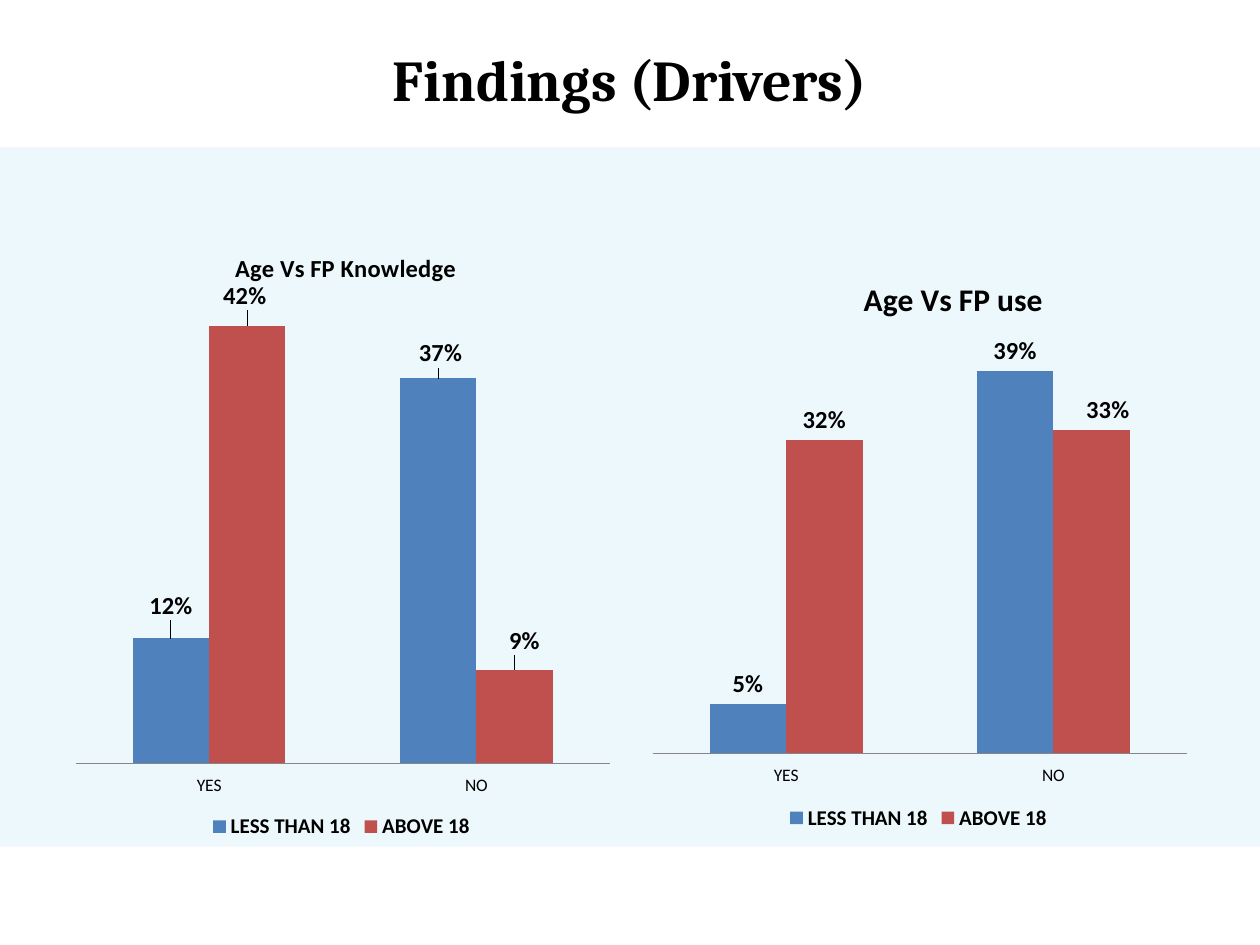
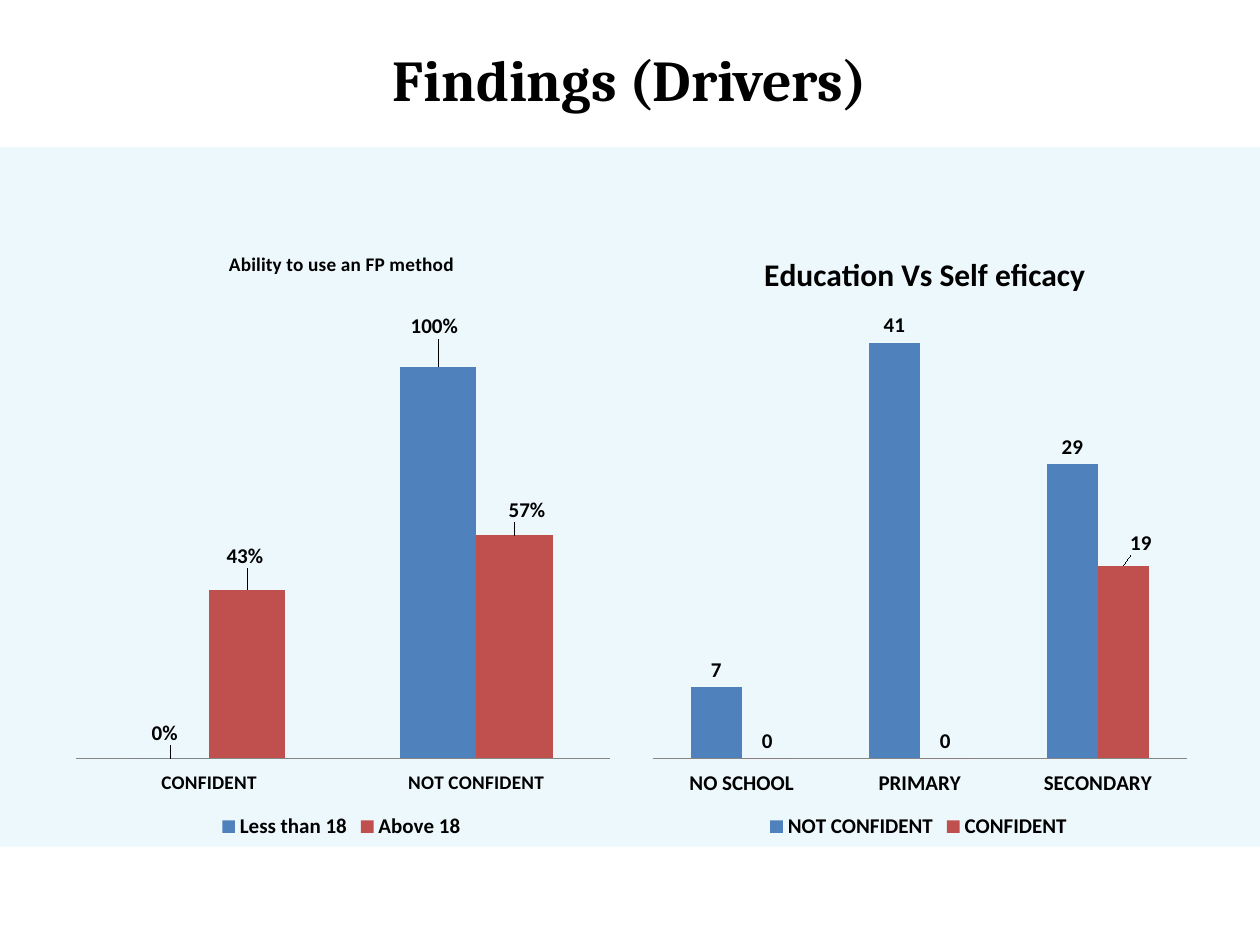
"""Build two slides of findings, each with a pair of clustered column charts."""
from lxml import etree
from pptx import Presentation
from pptx.chart.data import CategoryChartData
from pptx.dml.color import RGBColor
from pptx.enum.chart import XL_CHART_TYPE, XL_LABEL_POSITION, XL_LEGEND_POSITION, XL_TICK_LABEL_POSITION, XL_TICK_MARK
from pptx.enum.shapes import MSO_SHAPE
from pptx.enum.text import MSO_ANCHOR, PP_ALIGN
from pptx.oxml.ns import qn
from pptx.util import Inches, Pt

COLUMNS = XL_CHART_TYPE.COLUMN_CLUSTERED
ABOVE_BAR = XL_LABEL_POSITION.OUTSIDE_END
LEGEND_BOTTOM = XL_LEGEND_POSITION.BOTTOM
LABELS_LOW = XL_TICK_LABEL_POSITION.LOW
NO_TICK = XL_TICK_MARK.NONE
RECTANGLE = MSO_SHAPE.RECTANGLE
TOP = MSO_ANCHOR.TOP
CENTER = PP_ALIGN.CENTER

BLACK, AXIS_GRAY, BAND_BLUE = "000000", "868686", "57BFE3"
SERIES_COLORS = ["4F81BD", "C0504D"]
HEADING_FONT, BODY_FONT = "Cambria", "Calibri"
CHART_TOP, CHART_WIDTH = 1.75, 4.42
LEFT_COLUMN, RIGHT_COLUMN = 0.5, 5.08
PLOT_LEFT, PLOT_WIDTH = 0.1, 4.24

FINDINGS = [
    [
        {"title": "Age Vs FP Knowledge", "title_size": 14, "title_at": (1.33, 0.21),
         "left": LEFT_COLUMN, "height": 4.95, "plot_top": 0.59, "plot_height": 3.72,
         "answers": ["YES", "NO"], "answer_size": 10, "answer_bold": False,
         "groups": {"LESS THAN 18": [0.12, 0.37], "ABOVE 18": [0.42, 0.09]},
         "format": "0%", "maximum": 0.45, "label_size": 14,
         "label_shifts": {(0, 0): (0, -0.1), (0, 1): (0.02, -0.04),
                          (1, 0): (-0.02, -0.08), (1, 1): (0.08, -0.07)}},
        {"title": "Age Vs FP use", "title_size": 18, "title_at": (1.73, 0.41),
         "left": RIGHT_COLUMN, "height": 4.88, "plot_top": 0.73, "plot_height": 3.5,
         "answers": ["YES", "NO"], "answer_size": 10, "answer_bold": False,
         "groups": {"LESS THAN 18": [0.05, 0.39], "ABOVE 18": [0.32, 0.33]},
         "format": "0%", "maximum": 0.45, "label_size": 14,
         "label_shifts": {(1, 1): (0.13, 0)}},
    ],
    [
        {"title": "Ability to use an FP method", "title_size": 11, "title_at": (1.29, 0.21),
         "left": LEFT_COLUMN, "height": 4.95, "plot_top": 0.54, "plot_height": 3.73,
         "answers": ["CONFIDENT", "NOT CONFIDENT"], "answer_size": 11, "answer_bold": True,
         "groups": {"Less than 18": [0, 1], "Above 18": [0.43, 0.57]},
         "format": "0%", "maximum": 1.2, "label_size": 12,
         "label_shifts": {(0, 0): (-0.05, -0.06), (0, 1): (-0.03, -0.18),
                          (1, 0): (-0.02, -0.13), (1, 1): (0.1, -0.06)}},
        {"title": "Education Vs Self eficacy", "title_size": 18, "title_at": (0.94, 0.21),
         "left": RIGHT_COLUMN, "height": 4.95, "plot_top": 0.65, "plot_height": 3.62,
         "answers": ["NO SCHOOL", "PRIMARY", "SECONDARY"], "answer_size": 12, "answer_bold": True,
         "groups": {"NOT CONFIDENT": [7, 41, 29], "CONFIDENT": [0, 0, 19]},
         "format": "###0", "maximum": 45, "label_size": 12,
         "label_shifts": {(1, 2): (0.14, -0.04)}},
    ],
]


def style_font(font, size, bold, name=BODY_FONT):
    """Give a font its name, size and weight in black."""
    font.name, font.size, font.bold = name, Pt(size), bold
    font.color.rgb = RGBColor.from_string(BLACK)


def place(part, index, settings):
    """Give a chart part a manual layout at a child index."""
    for old_layout in part.findall(qn("c:layout")):
        part.remove(old_layout)
    layout = etree.Element(qn("c:layout"))
    manual = etree.SubElement(layout, qn("c:manualLayout"))
    for tag, value in settings.items():
        etree.SubElement(manual, qn(f"c:{tag}")).set("val", str(value))
    part.insert(index, layout)


prs = Presentation()
prs.slide_width, prs.slide_height = Inches(10), Inches(7.5)
title_only = prs.slide_layouts[5]

for findings in FINDINGS:
    slide = prs.slides.add_slide(title_only)

    band = slide.shapes.add_shape(RECTANGLE, 0, Inches(1.17), Inches(10), Inches(5.55))
    band.shadow.inherit = False
    band.line.fill.background()
    band.fill.solid()
    band.fill.fore_color.rgb = RGBColor.from_string(BAND_BLUE)
    band_color = band.fill._xPr.find(f".//{qn('a:srgbClr')}")
    etree.SubElement(band_color, qn("a:alpha")).set("val", "10000")

    heading = slide.shapes.title
    heading.left, heading.top = Inches(0.5), Inches(0.3)
    heading.width, heading.height = Inches(9), Inches(0.86)
    heading.text_frame.vertical_anchor = TOP
    heading_line = heading.text_frame.paragraphs[0]
    heading_line.alignment = CENTER
    heading_run = heading_line.add_run()
    heading_run.text = "Findings (Drivers)"
    style_font(heading_run.font, 33, True, HEADING_FONT)

    for finding in findings:
        height = finding["height"]
        data = CategoryChartData(number_format=finding["format"])
        data.categories = finding["answers"]
        for group, values in finding["groups"].items():
            data.add_series(group, values)
        chart = slide.shapes.add_chart(
            COLUMNS, Inches(finding["left"]), Inches(CHART_TOP),
            Inches(CHART_WIDTH), Inches(height), data).chart
        style_font(chart.font, 10, False)

        chart.has_title = True
        caption = chart.chart_title.text_frame.paragraphs[0].add_run()
        caption.text = finding["title"]
        style_font(caption.font, finding["title_size"], True)
        title_x, title_y = finding["title_at"]
        place(chart.chart_title._element, 1, {
            "xMode": "edge", "yMode": "edge",
            "x": title_x / CHART_WIDTH, "y": title_y / height})

        chart.has_legend = True
        chart.legend.position = LEGEND_BOTTOM
        chart.legend.include_in_layout = False
        style_font(chart.legend.font, 12, True)

        answer_axis = chart.category_axis
        answer_axis.major_tick_mark = answer_axis.minor_tick_mark = NO_TICK
        answer_axis.tick_label_position = LABELS_LOW
        answer_axis.has_major_gridlines = False
        answer_axis.format.line.color.rgb = RGBColor.from_string(AXIS_GRAY)
        answer_axis.format.line.width = Pt(0.75)
        style_font(answer_axis.tick_labels.font, finding["answer_size"], finding["answer_bold"])

        share_axis = chart.value_axis
        share_axis.visible = False
        share_axis.has_major_gridlines = False
        share_axis.minimum_scale, share_axis.maximum_scale = 0, finding["maximum"]
        share_axis.tick_labels.number_format = finding["format"]
        share_axis.tick_labels.number_format_is_linked = False

        plot = chart.plots[0]
        plot.gap_width, plot.overlap = 150, 0
        plot.vary_by_categories = False
        place(chart._chartSpace.find(f".//{qn('c:plotArea')}"), 0, {
            "layoutTarget": "inner", "xMode": "edge", "yMode": "edge",
            "x": PLOT_LEFT / CHART_WIDTH, "y": finding["plot_top"] / height,
            "w": PLOT_WIDTH / CHART_WIDTH, "h": finding["plot_height"] / height})

        for series, color in zip(plot.series, SERIES_COLORS):
            series.format.fill.solid()
            series.format.fill.fore_color.rgb = RGBColor.from_string(color)
            labels = series.data_labels
            labels.show_value = True
            labels.position = ABOVE_BAR
            labels.number_format = finding["format"]
            labels.number_format_is_linked = False
            style_font(labels.font, finding["label_size"], True)

        for (group_index, answer_index), (dx, dy) in finding["label_shifts"].items():
            series = plot.series[group_index]
            label = series.points[answer_index].data_label
            label.position = ABOVE_BAR
            style_font(label.font, finding["label_size"], True)
            label_part = series._element.xpath(f".//c:dLbl[c:idx/@val='{answer_index}']")[0]
            place(label_part, 1, {"x": dx / CHART_WIDTH, "y": dy / height})

prs.save("out.pptx")
